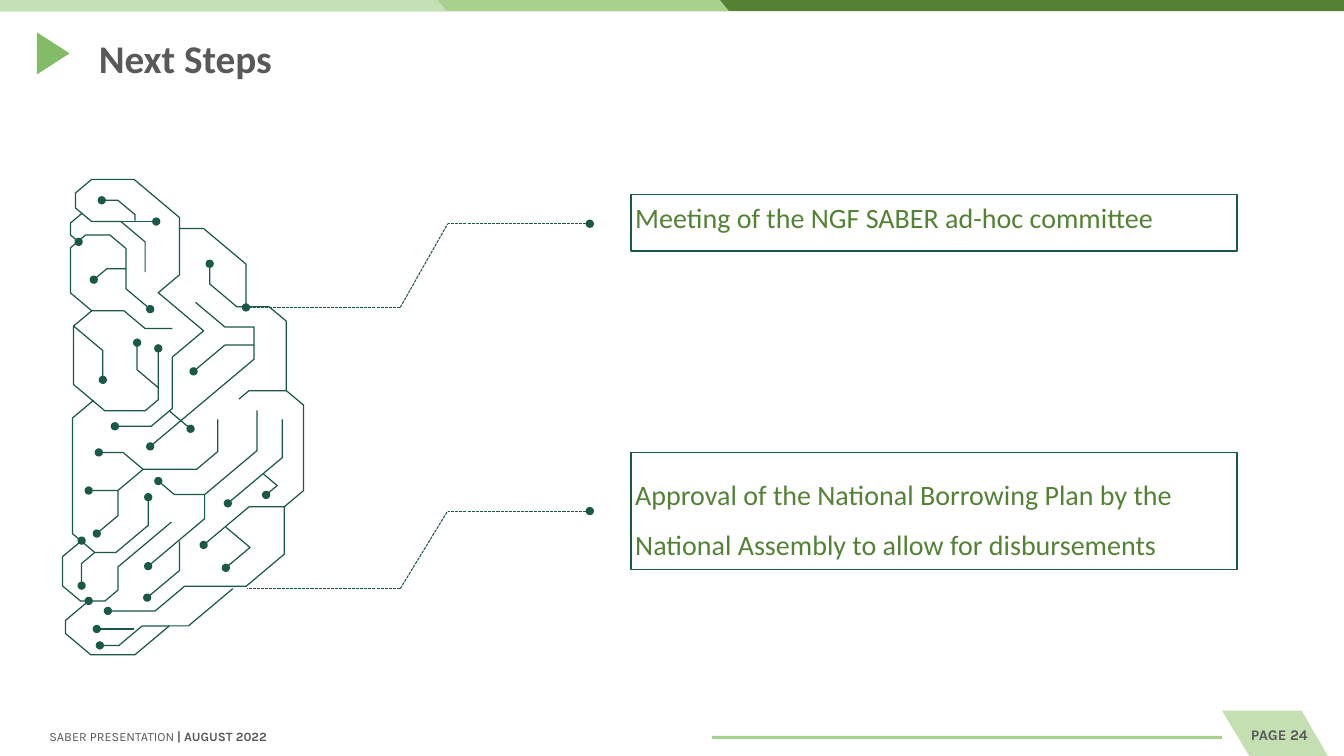
from dataclasses import dataclass

from lxml.etree import SubElement
from pptx import Presentation
from pptx.dml.color import RGBColor
from pptx.enum.dml import MSO_LINE
from pptx.enum.shapes import MSO_CONNECTOR, MSO_SHAPE
from pptx.enum.text import MSO_ANCHOR as ANCHOR, MSO_AUTO_SIZE, PP_ALIGN as ALIGN
from pptx.oxml.ns import qn
from pptx.util import Cm, Pt


@dataclass(frozen=True)
class Theme:
    dark: str = "1A5848"
    green: str = "548235"
    mid: str = "A9D18E"
    light: str = "C5E0B4"
    tab: str = "C4E0B2"
    marker: str = "82BC66"
    gray: str = "595959"
    main_font: str = "Calibri"
    small_font: str = "Karla"
    title_size: float = 28
    body_size: float = 20
    footer_size: float = 9
    page_size: float = 10.5
    trace_width: float = 0.88
    thin_width: float = 0.75
    box_width: float = 1


def u(x):
    """Length of x grid units; one unit is 2.54 cm."""
    return Cm(2.54 * x)


def write(p, text, *, size, color, font, bold=False, align=ALIGN.LEFT, spacing=None):
    p.alignment = align
    if spacing:
        p.line_spacing = spacing
    r = p.add_run()
    r.text = text
    r.font.size, r.font.name, r.font.bold = Pt(size), font, bold
    r.font.color.rgb = RGBColor.from_string(color)


# Circuit of the half brain: a start, then compass moves in hundredths of a unit.
# Diagonal moves give their width; brackets hold a branch.
SLOPE = 0.84
CIRCUIT = [
    (1.44, 2.7, "N30 NW24 [ E35 ] W29 NW16 N15 NE16 E42 SE45 S11 [ E24 SE42 S43 ] "
                "S46 SW21 SE45 SW31 S51 SW3 [ SE21 ] SW18 W36"),
    (1.34, 2.19, "N6 NW17 W16"),
    (1.71, 3.26, "W27 NW21 W32 [ SW18 [ SE29 S29 ] S58 SE31 E40 NE13 N12 [ NW21 N27 ] N39 ] "
                 "NW21 N45 NE15 E24 SE16 S20 [ W19 SW13 ] S20 SE24"),
    (2.37, 3.96, "NE10 E37 [ SE17 S85 SW19 [ W35 SW45 ] S47 SW38 W61 SW29 W47 ] "
                 "N69 NW17 W32 NW27 N20"),
    (2.31, 5.84, "SW44 W19 [ W27 SW23 W19 ] SW34 W44 NW25 N13 NE23"),
    (1.33, 6.24, "W37"),
    (1.94, 3, "SE29 E29 S18 [ W29 SW31 ] S14 SW103"),
    (2.16, 4.16, "S32 SW21 W53 [ SW25 [ S25 SW21 ] W29 ] NW20 W24"),
    (0.93, 3.97, "SW21 S115 SE22 [ SW13 S22 ] E21 NE32 N28"),
    (1.7, 5.18, "SW53 S23 SW13 W24 NW18 N29 NE19"),
    (2.55, 4.07, "S40 SW52 [ S24 SW56 ] W30 NW16"),
    (1.78, 5.37, "S29 SW32"),
    (2.8, 4.16, "S38 SW19 [ SE14 SW11 ] SW35"),
    (2.24, 5.23, "SE24 SW24"),
    (0.81, 2.12, "SW11 S12 SE8"),
]


def step(point, move):
    heading = move.rstrip("0123456789")
    length = int(move[len(heading):]) / 100
    dx = ("E" in heading) - ("W" in heading)
    dy = ("S" in heading) - ("N" in heading)
    if dx:
        dy *= SLOPE
    return point[0] + dx * length, point[1] + dy * length


def traces(x, y, moves):
    """Yield the points of a route and of each of its branches."""
    open_routes = [[(x, y)]]
    for move in moves.split():
        if move == "[":
            open_routes.append([open_routes[-1][-1]])
        elif move == "]":
            yield open_routes.pop()
        else:
            open_routes[-1].append(step(open_routes[-1][-1], move))
    yield open_routes.pop()


class SlideBuilder:
    def __init__(self, slide, theme):
        self.slide, self.theme = slide, theme
        self.shapes = slide.shapes

    def start_group(self):
        self.shapes = self.slide.shapes.add_group_shape().shapes

    def end_group(self):
        self.shapes = self.slide.shapes

    def outline(self, s, color, width, dash=None, ends=()):
        s.line.color.rgb = RGBColor.from_string(color)
        s.line.width = Pt(width)
        if dash:
            s.line.dash_style = dash
        ln = s.element.find(".//" + qn("a:ln"))
        for end in ends:
            SubElement(ln, qn(f"a:{end}"), type="oval")

    def paint(self, s, fill=None, line=None, width=0.75, ends=()):
        s.shadow.inherit = False
        if fill:
            s.fill.solid()
            s.fill.fore_color.rgb = RGBColor.from_string(fill)
        else:
            s.fill.background()
        if line:
            self.outline(s, line, width, ends=ends)
        else:
            s.line.fill.background()
        return s

    def rect(self, x, y, w, h, **style):
        s = self.shapes.add_shape(MSO_SHAPE.RECTANGLE, u(x), u(y), u(w), u(h))
        return self.paint(s, **style)

    def outline_shape(self, points, close=True, **style):
        (x, y), *rest = [(u(a), u(b)) for a, b in points]
        fb = self.shapes.build_freeform(x, y)
        fb.add_line_segments(rest, close=close)
        return self.paint(fb.convert_to_shape(), **style)

    def line(self, start, end, width, dash=None, ends=()):
        s = self.shapes.add_connector(MSO_CONNECTOR.STRAIGHT, *map(u, start + end))
        self.outline(s, self.theme.dark, width, dash, ends)
        SubElement(s.element.spPr, qn("a:effectLst"))

    def trace(self, points):
        t = self.theme
        if len(points) == 2:
            self.line(*points, t.trace_width, ends=["tailEnd"])
        else:
            self.outline_shape(points, close=False, line=t.dark,
                               width=t.trace_width, ends=["tailEnd"])

    def leader(self, top, bottom):
        dash, width = MSO_LINE.SQUARE_DOT, self.theme.thin_width
        upper, lower = (4.44, top), (3.97, bottom)
        self.start_group()
        self.line((5.85, top), upper, width, dash, ["headEnd"])
        self.line(lower, (2.45, bottom), width, dash)
        self.line(lower, upper, width, dash)
        self.end_group()

    def frame(self, tf, anchor, insets):
        tf.word_wrap = True
        tf.auto_size = MSO_AUTO_SIZE.NONE
        tf.vertical_anchor = anchor
        tf.margin_left, tf.margin_top, tf.margin_right, tf.margin_bottom = map(u, insets)
        return tf.paragraphs[0]

    def box(self, y, h, text, spacing):
        t = self.theme
        s = self.rect(6.26, y, 6.01, h, line=t.dark, width=t.box_width)
        p = self.frame(s.text_frame, ANCHOR.MIDDLE, (0.04, 0.07) * 2)
        write(p, text, size=t.body_size, color=t.green, font=t.main_font, spacing=spacing)

    def label(self, x, y, w, h, runs, size, align=ALIGN.LEFT):
        t = self.theme
        s = self.shapes.add_textbox(u(x), u(y), u(w), u(h))
        p = self.frame(s.text_frame, ANCHOR.BOTTOM, (0, 0, 0, 0.02))
        for text, bold in runs:
            write(p, text, size=size, color=t.gray, font=t.small_font, bold=bold, align=align)

    def title(self, text):
        t, s = self.theme, self.slide.shapes.title
        s.left, s.top, s.width, s.height = map(u, (0.88, 0.38, 9.43, 0.49))
        p = self.frame(s.text_frame, ANCHOR.TOP, (0.1, 0.05) * 2)
        write(p, text, size=t.title_size, color=t.gray, font=t.main_font, bold=True, spacing=0.8)


def main():
    prs = Presentation()
    prs.slide_width, prs.slide_height = u(13.33), u(7.5)
    t = Theme()
    sb = SlideBuilder(prs.slides.add_slide(prs.slide_layouts[5]), t)

    # Top band
    sb.start_group()
    sb.rect(0, 0, 13.33, 0.11, fill=t.green)
    for right, color in [(7.14, t.mid), (4.34, t.light)]:
        sb.outline_shape([(right, 0), (right + 0.09, 0.11), (0, 0.11), (0, 0)], fill=color)
    sb.end_group()

    # Title and marker
    sb.outline_shape([(0.37, 0.33), (0.68, 0.53), (0.37, 0.73)],
                     fill=t.marker, line=t.marker, width=t.thin_width)
    sb.title("Next Steps")

    # Brain
    sb.start_group()
    for route in CIRCUIT:
        for points in traces(*route):
            sb.trace(points)
    sb.end_group()

    # Steps with their leaders
    sb.leader(2.22, 3.05)
    sb.box(1.93, 0.56, "Meeting of the NGF SABER ad-hoc committee", Pt(16.2))
    sb.leader(5.07, 5.84)
    sb.box(4.49, 1.16, "Approval of the National Borrowing Plan by the National Assembly "
           "to allow for disbursements", 1.5)

    # Footer
    sb.outline_shape([(12.12, 7.05), (12.91, 7.05), (13.17, 7.5), (12.39, 7.5)], fill=t.tab)
    sb.rect(7.06, 7.3, 5.06, 0.03, fill=t.mid)
    sb.label(0.49, 7.23, 7.4, 0.17,
             [("SABER PRESENTATION ", False), ("| AUGUST 2022", True)], t.footer_size)
    sb.label(10.53, 7.2, 2.44, 0.2, [("PAGE 24", True)], t.page_size, ALIGN.RIGHT)

    prs.save("out.pptx")


if __name__ == "__main__":
    main()
